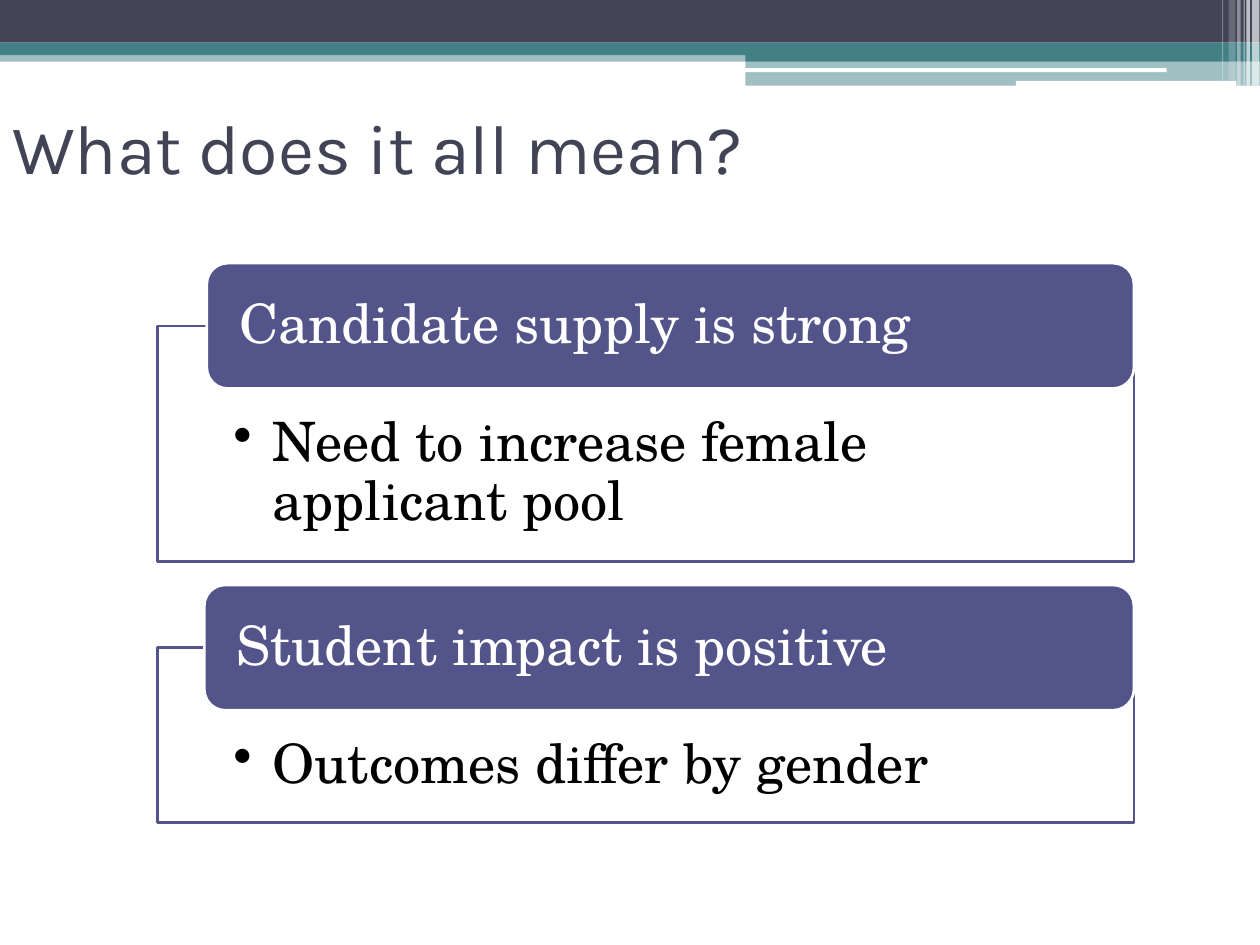
from lxml import etree
from pptx import Presentation
from pptx.dml.color import RGBColor
from pptx.enum import shapes, text
from pptx.oxml import ns
from pptx.util import Pt

COLORS = {
    "slate": "424456",
    "teal": "438086",
    "violet": "53548A",
    "white": "FFFFFF",
    "black": "000000",
}
BODY_FONT = "TeX Gyre Schola"
TITLE_FONT = "Karla"
RECTANGLE = shapes.MSO_SHAPE.RECTANGLE
ROUNDED = shapes.MSO_SHAPE.ROUNDED_RECTANGLE

# left, top, width, height, colour, opacity in percent
BANDS = [
    (0, 28.8, 720, 6.5, "teal", 50),
    (0, 0, 720, 24.4, "slate", 100),
    (0, 24.4, 720, 7.2, "teal", 100),
    (426, 28, 294, 7.1, "teal", 100),
    (426, 34.8, 294, 14.2, "teal", 50),
]
# left, top, width, height
HIGHLIGHTS = [(425.5, 39, 241.2, 2.2), (580.5, 46.2, 126, 2.9)]
# left, width, height, opacity in percent
STRIPES = [
    (715.5, 4.2, 49, 65),
    (712.2, 2, 49, 65),
    (710.6, 0.7, 49, 60),
    (706.9, 2, 49, 40),
    (702, 4, 46.1, 20),
    (698.3, 0.7, 46.1, 30),
]
# heading, bullet, heading left, heading top, frame height
TOPICS = [
    ("Candidate supply is strong", "Need to increase female applicant pool", 118.2, 150.4, 134.5),
    ("Student impact is positive", "Outcomes differ by gender", 116.8, 334.3, 99.9),
]
FRAME_LEFT, FRAME_RIGHT = 90, 648
HEADING_HEIGHT = 71.6


def color(name):
    return RGBColor.from_string(COLORS[name])


def add_block(slide, kind, box, fill, opacity=100, line=None):
    """Add a filled preset shape; box is left, top, width, height in points."""
    shape = slide.shapes.add_shape(kind, *map(Pt, box))
    shape.shadow.inherit = False
    shape.fill.solid()
    shape.fill.fore_color.rgb = color(fill)
    if opacity < 100:
        rgb = shape.fill._xPr.find(".//" + ns.qn("a:srgbClr"))
        etree.SubElement(rgb, ns.qn("a:alpha"), val=str(opacity * 1000))
    if line:
        shape.line.color.rgb = color(line)
        shape.line.width = Pt(1.5)
    else:
        shape.line.fill.background()
    return shape


def write(shape, wording, font, size, ink, anchor, margins=(7.2, 3.6, 7.2, 3.6)):
    frame = shape.text_frame
    frame.word_wrap = True
    frame.vertical_anchor = anchor
    frame.margin_left, frame.margin_top, frame.margin_right, frame.margin_bottom = map(Pt, margins)
    paragraph = frame.paragraphs[0]
    paragraph.text = wording
    paragraph.alignment = text.PP_ALIGN.LEFT
    paragraph.font.name = font
    paragraph.font.size = Pt(size)
    paragraph.font.color.rgb = color(ink)
    return paragraph


def add_bullet(paragraph, indent):
    properties = paragraph._p.get_or_add_pPr()
    properties.set("marL", str(Pt(indent)))
    properties.set("indent", str(-Pt(indent)))
    bullet = etree.Element(ns.qn("a:buChar"), char="•")
    properties.find(ns.qn("a:defRPr")).addprevious(bullet)


def add_banner(slide):
    for *box, fill, opacity in BANDS:
        add_block(slide, RECTANGLE, box, fill, opacity)
    for box in HIGHLIGHTS:
        add_block(slide, ROUNDED, box, "white")
    for left, width, height, opacity in STRIPES:
        add_block(slide, RECTANGLE, (left, 0, width, height), "white", opacity)


def add_title(slide, wording):
    box = slide.shapes.add_textbox(0, Pt(41.8), Pt(648), Pt(84.2))
    write(box, wording, TITLE_FONT, 40, "slate", text.MSO_ANCHOR.MIDDLE)


def add_topic(slide, heading, bullet, left, top, frame_height):
    """Add an outlined frame with a bullet, and a heading over its top edge."""
    frame_box = (FRAME_LEFT, top + HEADING_HEIGHT / 2, FRAME_RIGHT - FRAME_LEFT, frame_height)
    frame = add_block(slide, RECTANGLE, frame_box, "white", 90, "violet")
    paragraph = write(frame, bullet, BODY_FONT, 31, "black",
                      text.MSO_ANCHOR.TOP, (43.3, 51, 43.3, 17))
    paragraph.line_spacing = 0.9
    add_bullet(paragraph, 22.5)

    heading_box = (left, top, FRAME_RIGHT - left, HEADING_HEIGHT)
    label = add_block(slide, ROUNDED, heading_box, "violet", line="white")
    paragraph = write(label, heading, BODY_FONT, 31, "white",
                      text.MSO_ANCHOR.MIDDLE, (15, 0, 15, 0))
    paragraph.line_spacing = 0.9


def main():
    presentation = Presentation()
    presentation.slide_width, presentation.slide_height = Pt(720), Pt(540)
    slide = presentation.slides.add_slide(presentation.slide_layouts[6])
    add_banner(slide)
    add_title(slide, "What does it all mean?")
    for topic in TOPICS:
        add_topic(slide, *topic)
    presentation.save("out.pptx")


if __name__ == "__main__":
    main()
